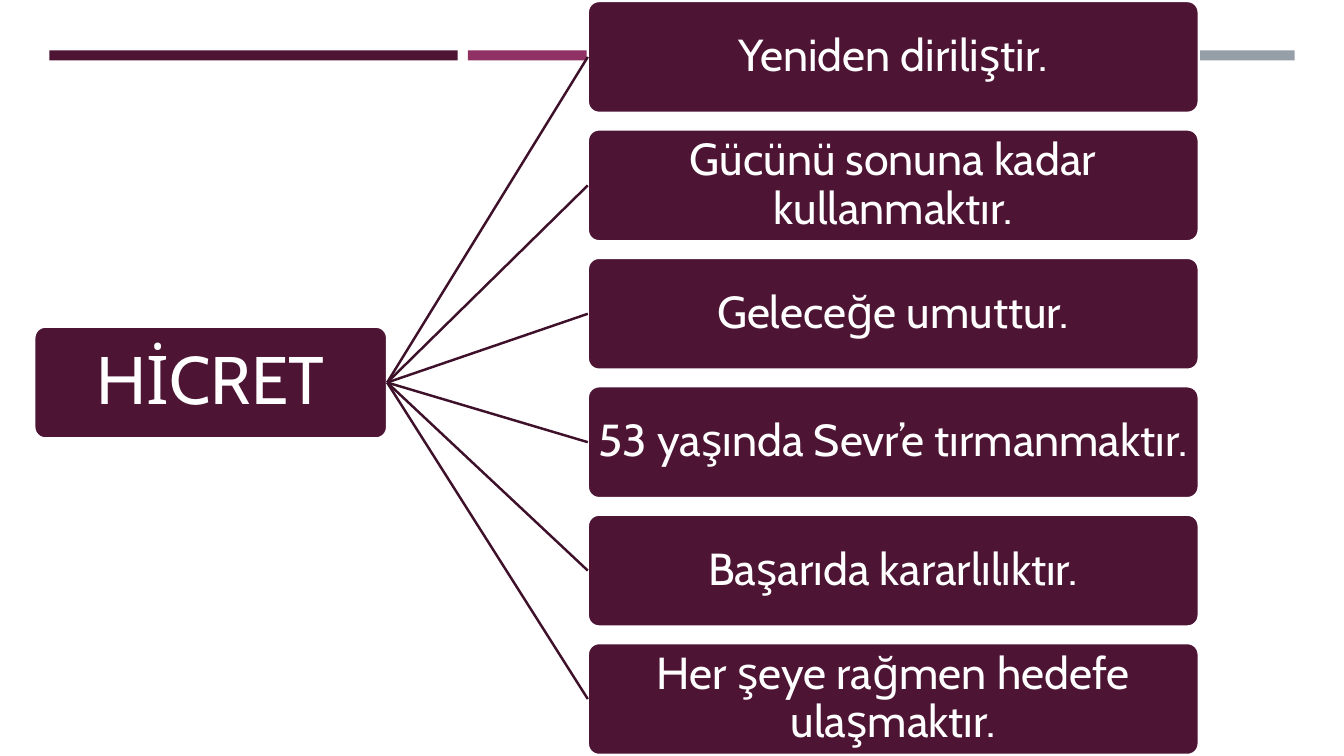
import pptx
import pptx.util
import pptx.dml.color
import pptx.enum.shapes
import pptx.enum.text
import pptx.oxml
from pptx.util import Inches, Pt

COLORS = {
    "plum": "4D1434",
    "magenta": "903163",
    "gray": "969FA7",
    "branch": "3E102A",
    "white": "FFFFFF",
}
FONT = "Cabin"
BOX_HEIGHT = 1.11
FIRST_TOP, LAST_TOP = 0.01, 6.38
MEANINGS = [
    "Yeniden diriliştir.",
    "Gücünü sonuna kadar kullanmaktır.",
    "Geleceğe umuttur.",
    "53 yaşında Sevr’e tırmanmaktır.",
    "Başarıda kararlılıktır.",
    "Her şeye rağmen hedefe ulaşmaktır.",
]


def color(name):
    return pptx.dml.color.RGBColor.from_string(COLORS[name])


def add_filled(page, kind, left, top, width, height, fill):
    shape = page.shapes.add_shape(
        kind, Inches(left), Inches(top), Inches(width), Inches(height))
    shape.shadow.inherit = False
    shape.fill.solid()
    shape.fill.fore_color.rgb = color(fill)
    return shape


def add_bar(page, left, fill):
    bar = add_filled(page, pptx.enum.shapes.MSO_SHAPE.RECTANGLE,
                     left, 0.5, 4.05, 0.1, fill)
    bar.line.fill.background()


def add_box(page, left, top, width, text, size):
    """Add a rounded diagram box with centred text."""
    box = add_filled(page, pptx.enum.shapes.MSO_SHAPE.ROUNDED_RECTANGLE,
                     left, top, width, BOX_HEIGHT, "plum")
    box.adjustments[0] = 0.1
    box.line.color.rgb = color("white")
    box.line.width = Pt(1.75)
    frame = box.text_frame
    frame.word_wrap = True
    frame.vertical_anchor = pptx.enum.text.MSO_ANCHOR.MIDDLE
    frame.margin_left = frame.margin_right = Inches(0.02)
    frame.margin_top = frame.margin_bottom = Inches(0.02)
    para = frame.paragraphs[0]
    para.text = text
    para.alignment = pptx.enum.text.PP_ALIGN.CENTER
    para.line_spacing = 0.9
    para.font.name = FONT
    para.font.size = Pt(size)
    para.font.color.rgb = color("white")
    return box


def add_branch(page, root, leaf):
    """Join the right side of root to the left side of leaf."""
    branch = page.shapes.add_connector(
        pptx.enum.shapes.MSO_CONNECTOR.STRAIGHT, 0, 0, 0, 0)
    branch.begin_connect(root, 3)
    branch.end_connect(leaf, 1)
    branch.line.color.rgb = color("branch")
    branch.line.width = Pt(1.75)
    properties = branch._element.spPr
    properties.append(pptx.oxml.parse_xml(
        '<a:effectLst xmlns:a="http://schemas.openxmlformats.org/drawingml/2006/main"/>'))


def main():
    deck = pptx.Presentation()
    deck.slide_width = Inches(13.33)
    deck.slide_height = Inches(7.5)
    page = deck.slides.add_slide(deck.slide_layouts.get_by_name("Blank"))

    for index, fill in enumerate(["plum", "magenta", "gray"]):
        add_bar(page, 0.49 + 4.15 * index, fill)

    root = add_box(page, 0.34, 3.24, 3.5, "HİCRET", 48)
    pitch = (LAST_TOP - FIRST_TOP) / (len(MEANINGS) - 1)
    for index, meaning in enumerate(MEANINGS):
        leaf = add_box(page, 5.83, FIRST_TOP + pitch * index, 6.06, meaning, 32)
        add_branch(page, root, leaf)

    deck.save("out.pptx")


if __name__ == "__main__":
    main()
